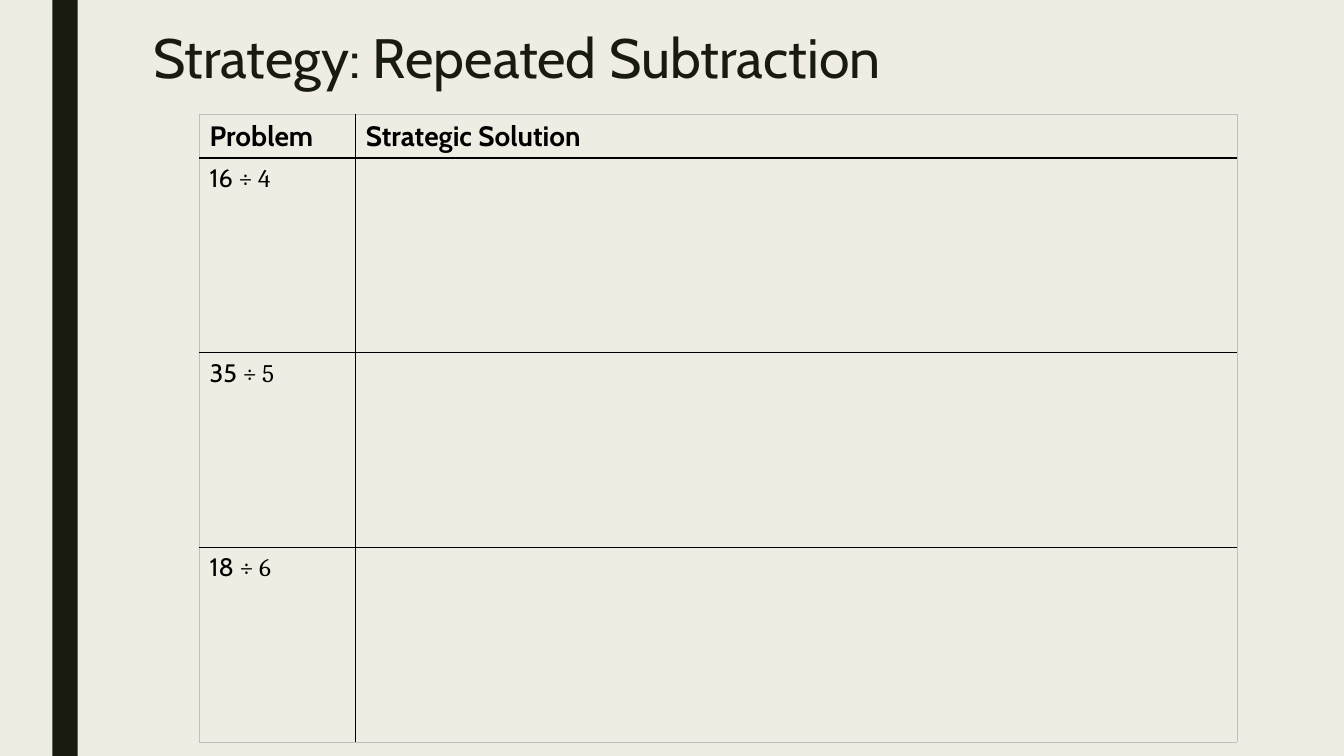
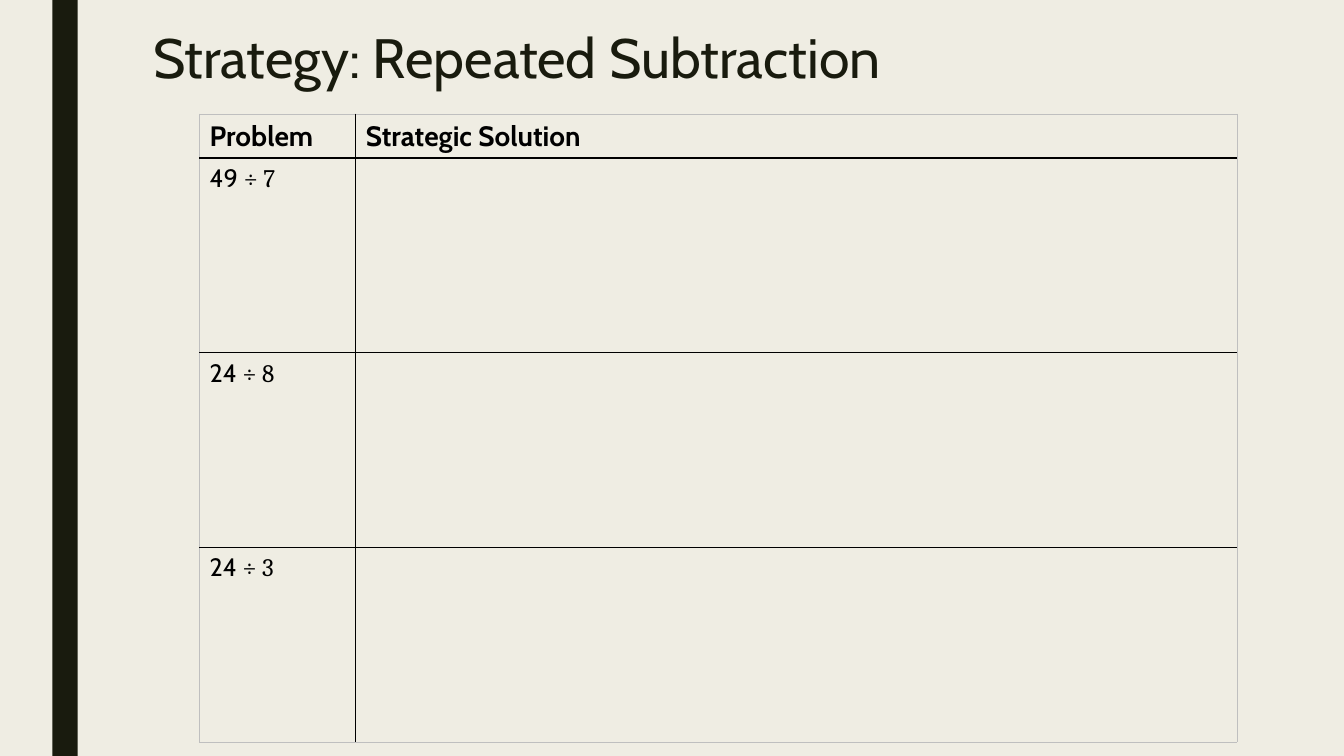
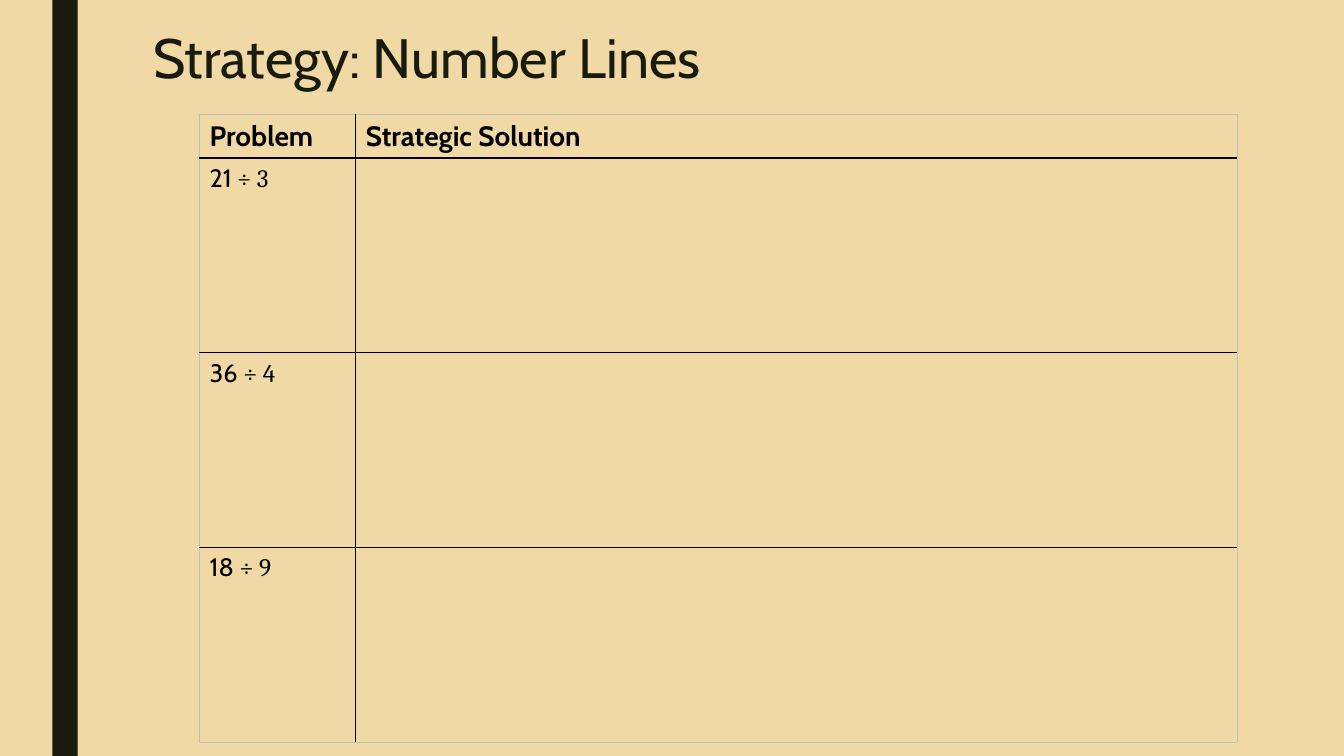
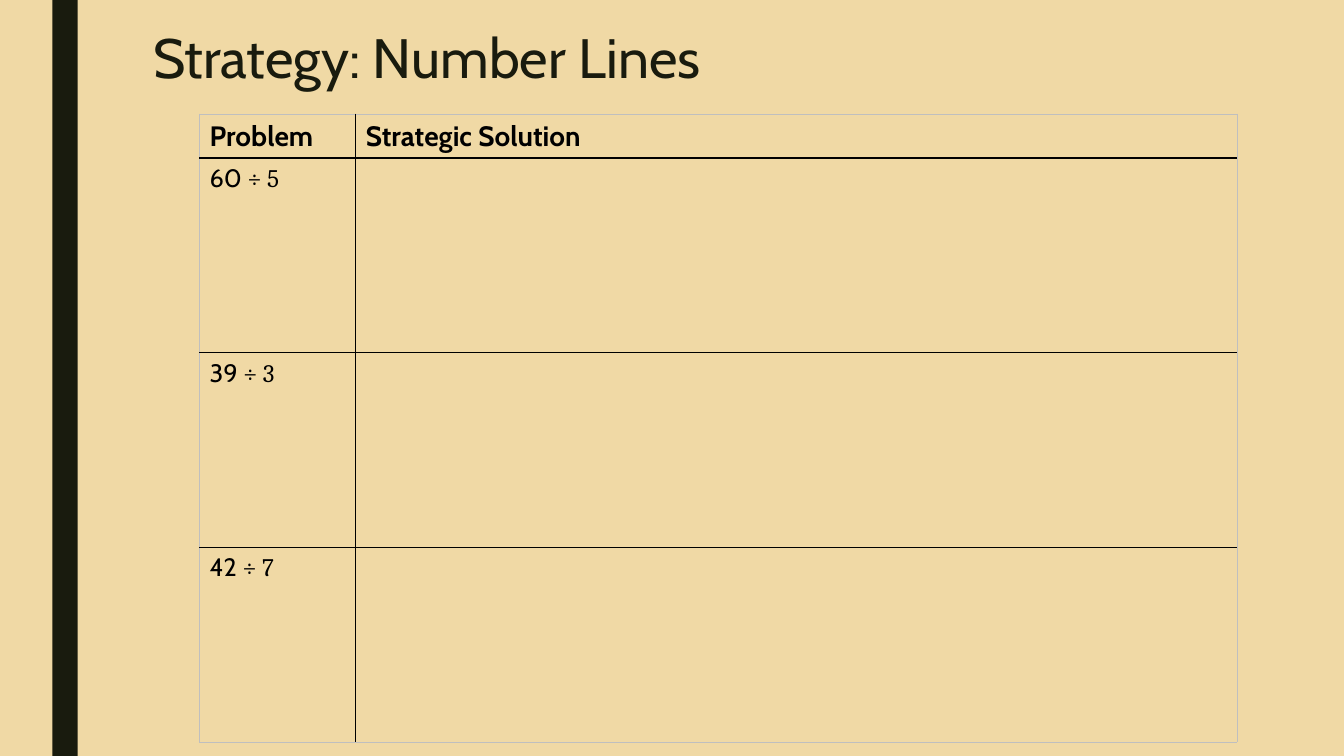
from lxml import etree
from pptx import Presentation
from pptx.dml.color import RGBColor
from pptx.enum.shapes import MSO_SHAPE
from pptx.enum.text import MSO_ANCHOR
from pptx.oxml.ns import qn
from pptx.util import Inches, Pt

RECTANGLE = MSO_SHAPE.RECTANGLE
MIDDLE = MSO_ANCHOR.MIDDLE

COLORS = {
    "cream": "EFEDE3",
    "sand": "F0D9A5",
    "ink": "191B0E",
    "black": "000000",
    "frame": "BFBFBF",
}
BODY_FONT, MATH_FONT = "Cabin", "Cambria"
CELL = 0.25
SLIDE_COLS, SLIDE_ROWS = 53.33, 30
TABLE_COLS = (6.2, 34.96)
HEADER_ROW, PROBLEM_ROW = 1.76, 7.72
PLAIN_TABLE = "{2D5ABB26-0587-4C30-8999-92F81FD0307C}"
HEADINGS = ("Problem", "Strategic Solution")

SLIDES = (
    ("Repeated Subtraction", "cream", ((16, 4), (35, 5), (18, 6))),
    ("Repeated Subtraction", "cream", ((49, 7), (24, 8), (24, 3))),
    ("Number Lines", "sand", ((21, 3), (36, 4), (18, 9))),
    ("Number Lines", "sand", ((60, 5), (39, 3), (42, 7))),
)


def grid(n):
    return Inches(n * CELL)


def rgb(name):
    return RGBColor.from_string(COLORS[name])


def add_text(p, text, size=18, font=BODY_FONT, color="black", bold=False):
    r = p.add_run()
    r.text = text
    r.font.size = Pt(size)
    r.font.name = font
    r.font.bold = bold
    r.font.color.rgb = rgb(color)


class Deck:
    """Holds the deck's style and the slide being built."""

    def __init__(self):
        self.prs = Presentation()
        self.prs.slide_width = grid(SLIDE_COLS)
        self.prs.slide_height = grid(SLIDE_ROWS)
        self.s = None

    def slide(self, background):
        self.s = self.prs.slides.add_slide(self.prs.slide_layouts[6])
        fill = self.s.background.fill
        fill.solid()
        fill.fore_color.rgb = rgb(background)
        self.band()

    def band(self):
        sp = self.s.shapes.add_shape(
            RECTANGLE, grid(2.08), 0, grid(1), grid(SLIDE_ROWS))
        sp.shadow.inherit = False
        sp.fill.solid()
        sp.fill.fore_color.rgb = rgb("ink")
        sp.line.fill.background()

    def title(self, text):
        sp = self.s.shapes.add_textbox(grid(5.68), grid(0.92), grid(42), grid(3))
        tf = sp.text_frame
        tf.word_wrap = True
        tf.vertical_anchor = MIDDLE
        p = tf.paragraphs[0]
        p.line_spacing = 0.89
        add_text(p, text, size=39.6, color="ink")

    def borders(self, cell, **sides):
        tc_pr = cell._tc.get_or_add_tcPr()
        for side in "LRTB":
            color, width = sides[side]
            ln = etree.SubElement(tc_pr, qn(f"a:ln{side}"), w=str(Pt(width)))
            fill = etree.SubElement(ln, qn("a:solidFill"))
            etree.SubElement(fill, qn("a:srgbClr"), val=COLORS[color])
        cell.fill.background()

    def problem_table(self, problems):
        heights = [HEADER_ROW] + [PROBLEM_ROW] * len(problems)
        frame = self.s.shapes.add_table(
            len(heights), len(TABLE_COLS), grid(7.92), grid(4.52),
            grid(sum(TABLE_COLS)), grid(sum(heights)))
        table = frame.table
        table.first_row = table.horz_banding = False
        table._tbl.tblPr.find(qn("a:tableStyleId")).text = PLAIN_TABLE
        for column, width in zip(table.columns, TABLE_COLS):
            column.width = grid(width)
        for row, height in zip(table.rows, heights):
            row.height = grid(height)

        outer, inner, rule = ("frame", 0.5), ("black", 1), ("black", 1.5)
        lines = [outer, rule] + [inner] * (len(problems) - 1) + [outer]
        for i, row in enumerate(table.rows):
            for j, cell in enumerate(row.cells):
                self.borders(cell, L=inner if j else outer,
                             R=outer if j else inner,
                             T=lines[i], B=lines[i + 1])

        for j, heading in enumerate(HEADINGS):
            p = table.cell(0, j).text_frame.paragraphs[0]
            add_text(p, heading, size=20, bold=True)
        for i, (dividend, divisor) in enumerate(problems, 1):
            p = table.cell(i, 0).text_frame.paragraphs[0]
            add_text(p, f"{dividend} ")
            add_text(p, f"÷ {divisor}", font=MATH_FONT)


def main():
    deck = Deck()
    for strategy, background, problems in SLIDES:
        deck.slide(background)
        deck.title(f"Strategy: {strategy}")
        deck.problem_table(problems)
    deck.prs.save("out.pptx")


if __name__ == "__main__":
    main()
